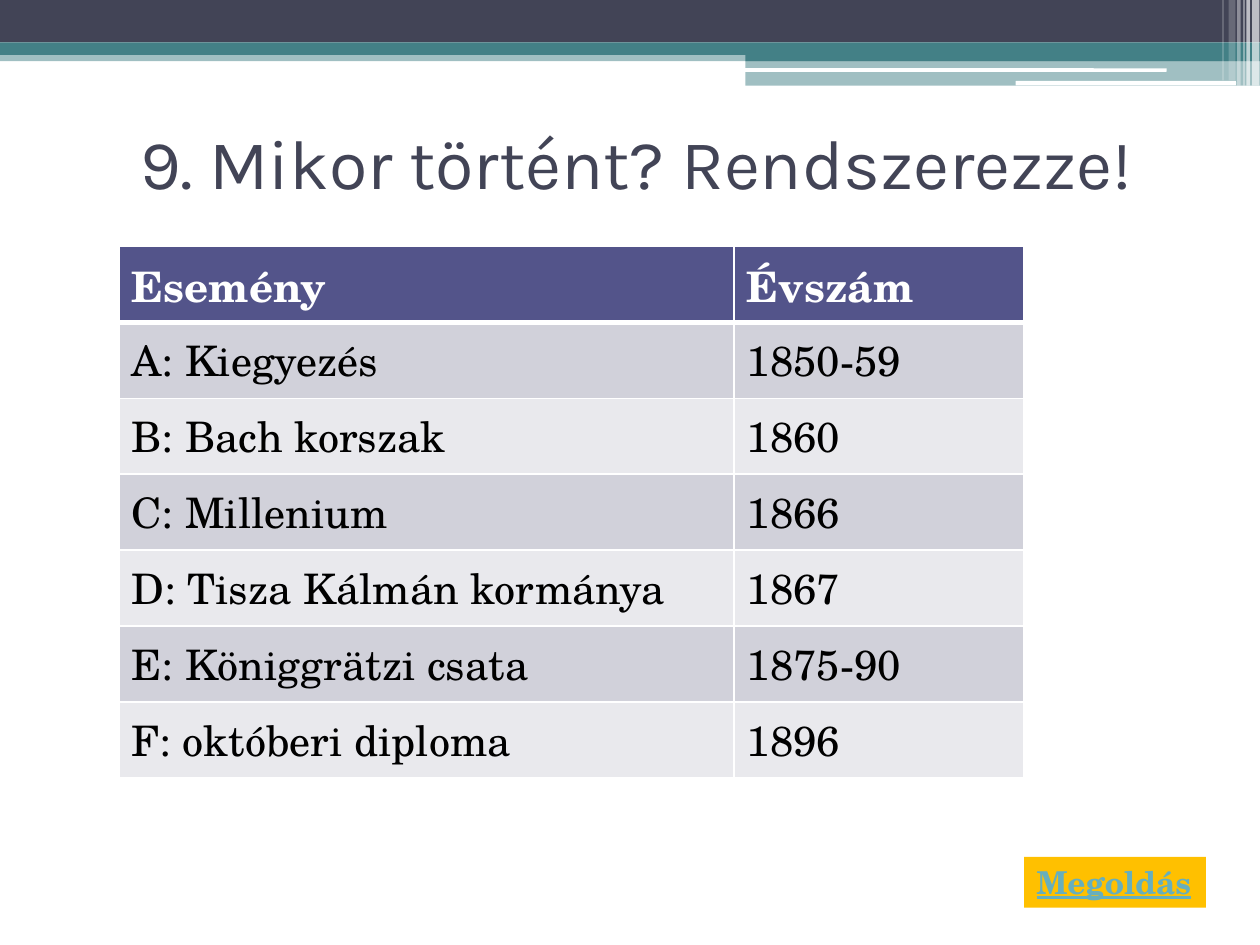
"""Build the history quiz slide with its table of events and years."""
from lxml.etree import SubElement
from pptx import Presentation
from pptx.dml.color import RGBColor
from pptx.enum.shapes import MSO_SHAPE
from pptx.enum.text import MSO_ANCHOR, MSO_AUTO_SIZE, PP_ALIGN
from pptx.oxml.ns import qn
from pptx.util import Pt

SERIF = "TeX Gyre Schola"
DARK, TEAL, WHITE = "424456", "438086", "FFFFFF"
BANDS = [
    (0, 28.8, 720, 6.2, TEAL, 50),
    (0, 0, 720, 24.2, DARK, 100),
    (0, 24.2, 720, 7.2, TEAL, 100),
    (426, 28, 294, 7, TEAL, 100),
    (426, 35, 294, 14, TEAL, 50),
]
HIGHLIGHTS = [(425.5, 39, 241.2, 2), (580.3, 46.2, 126, 2.6)]
STRIPES = [
    (715.5, 4.2, 49, 65),
    (712.2, 2, 49, 65),
    (710.5, 0.7, 49, 60),
    (707, 2, 49, 40),
    (702, 4, 46, 20),
    (698.5, 0.7, 46, 30),
]
EVENTS = [
    ("Esemény", "Évszám"),
    ("A: Kiegyezés", "1850-59"),
    ("B: Bach korszak", "1860"),
    ("C: Millenium", "1866"),
    ("D: Tisza Kálmán kormánya", "1867"),
    ("E: Königgrätzi csata", "1875-90"),
    ("F: októberi diploma", "1896"),
]


def paint(fill, color):
    """Give a fill or font one solid colour."""
    fill.solid()
    fill.fore_color.rgb = RGBColor.from_string(color)


def add_block(slide, left, top, width, height, color, opacity=100,
              kind=MSO_SHAPE.RECTANGLE):
    """Add a borderless shape, with opacity in percent."""
    block = slide.shapes.add_shape(kind, Pt(left), Pt(top), Pt(width), Pt(height))
    block.shadow.inherit = False
    block.line.fill.background()
    paint(block.fill, color)
    if opacity < 100:
        tint = block.fill._xPr.find(qn("a:solidFill"))[0]
        SubElement(tint, qn("a:alpha"), val=str(opacity * 1000))
    return block


def write(paragraph, text, font, size, color, bold=False):
    """Add one formatted run and return it."""
    run = paragraph.add_run()
    run.text = text
    run.font.name = font
    run.font.size = Pt(size)
    run.font.bold = bold
    paint(run.font.fill, color)
    return run


def add_header(slide):
    """Draw the layered bands across the top."""
    for band in BANDS:
        add_block(slide, *band)
    for highlight in HIGHLIGHTS:
        add_block(slide, *highlight, WHITE, kind=MSO_SHAPE.ROUNDED_RECTANGLE)
    for left, width, height, opacity in STRIPES:
        add_block(slide, left, 0, width, height, WHITE, opacity)


def add_title(slide, text):
    """Add the centred slide title."""
    frame = slide.shapes.add_textbox(Pt(39.6), Pt(50.4), Pt(648), Pt(84.2)).text_frame
    frame.word_wrap = True
    frame.vertical_anchor = MSO_ANCHOR.MIDDLE
    frame.paragraphs[0].alignment = PP_ALIGN.CENTER
    write(frame.paragraphs[0], text, "Karla", 40, DARK)


def add_button(slide, text):
    """Add the underlined solution label on its yellow box."""
    frame = add_block(slide, 585.3, 489.6, 103.8, 29.08, "FFC000").text_frame
    frame.word_wrap = False
    frame.auto_size = MSO_AUTO_SIZE.SHAPE_TO_FIT_TEXT
    frame.vertical_anchor = MSO_ANCHOR.TOP
    frame.paragraphs[0].alignment = PP_ALIGN.LEFT
    write(frame.paragraphs[0], text, SERIF, 18, "67AFBD", True).font.underline = True


def add_borders(cell, top, bottom):
    """Draw white cell borders, with the top and bottom widths given."""
    properties = cell._tc.get_or_add_tcPr()
    for side, width in (("L", 1), ("R", 1), ("T", top), ("B", bottom)):
        border = SubElement(properties, qn(f"a:ln{side}"), w=str(Pt(width)))
        SubElement(SubElement(border, qn("a:solidFill")), qn("a:srgbClr"), val=WHITE)


def add_events(slide):
    """Add the table of events and years."""
    table = slide.shapes.add_table(
        len(EVENTS), 2, Pt(68), Pt(140.8), Pt(517), Pt(303.8)).table
    for column, width in zip(table.columns, (351.5, 165.5)):
        column.width = Pt(width)
    for index, event in enumerate(EVENTS):
        table.rows[index].height = Pt(43.4)
        heading = index == 0
        background = "53548A" if heading else ("E9E9ED", "D1D1DA")[index % 2]
        for column, text in enumerate(event):
            cell = table.cell(index, column)
            add_borders(cell, 3 if index == 1 else 1, 3 if heading else 1)
            paint(cell.fill, background)
            write(cell.text_frame.paragraphs[0], text, SERIF, 24,
                  WHITE if heading else "000000", heading)


def main():
    """Build and save the slide."""
    presentation = Presentation()
    presentation.slide_width, presentation.slide_height = Pt(720), Pt(540)
    slide = presentation.slides.add_slide(presentation.slide_layouts[6])
    paint(slide.background.fill, WHITE)
    add_header(slide)
    add_title(slide, "9. Mikor történt? Rendszerezze!")
    add_button(slide, "Megoldás")
    add_events(slide)
    presentation.save("out.pptx")


if __name__ == "__main__":
    main()
